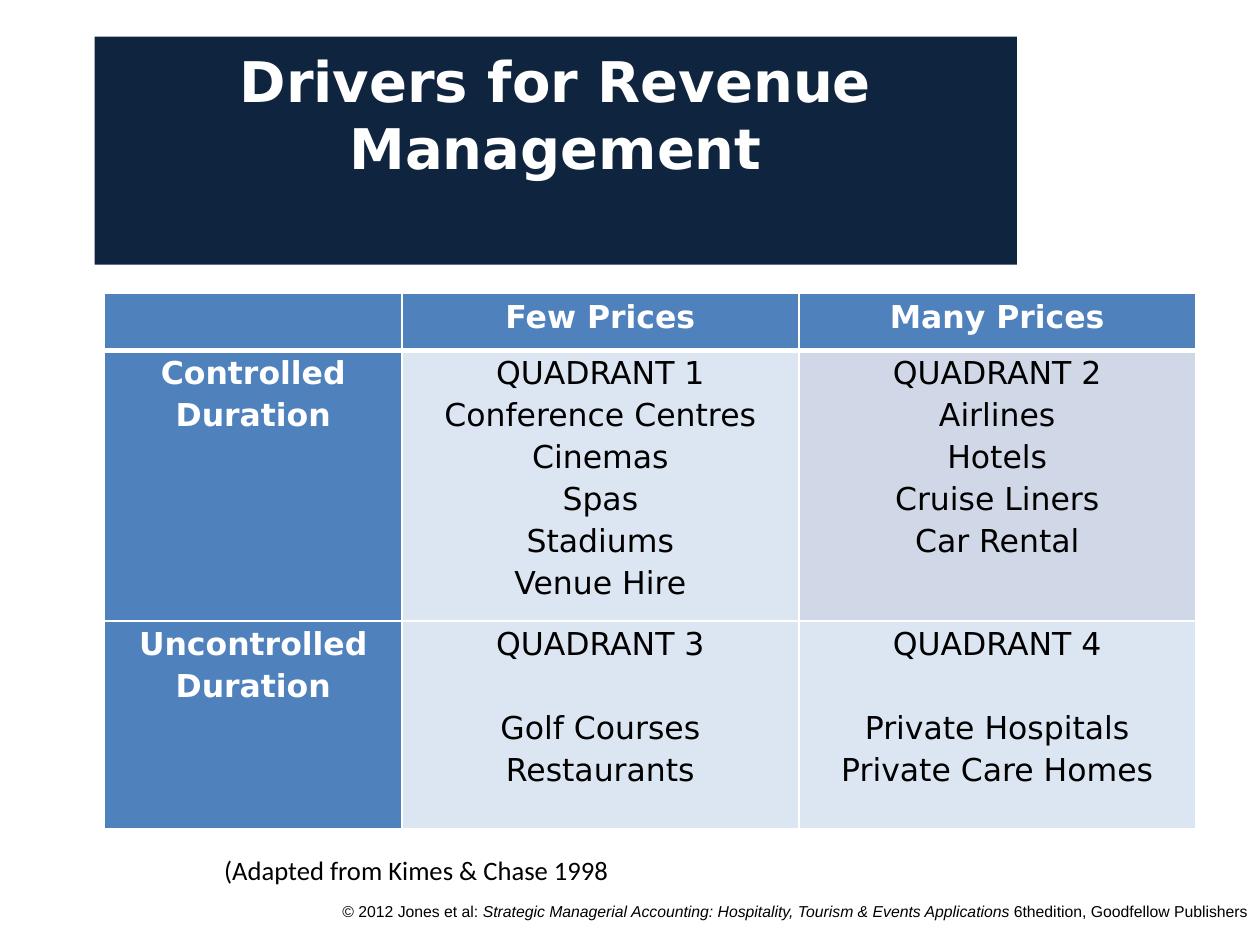
from dataclasses import dataclass

import pptx
import pptx.dml.color
import pptx.enum.shapes
import pptx.enum.text
import pptx.oxml.ns
import pptx.util
from lxml import etree

# The slide is a grid of 100 columns by 75 rows, each a tenth of an inch
UNIT = 0.1
COLUMNS, ROWS = 100, 75
COLORS = {"navy": "0F243E", "blue": "4F81BD", "pale": "DCE6F2",
          "lilac": "D0D8E8", "white": "FFFFFF", "black": "000000"}
ALIGN = pptx.enum.text.PP_ALIGN
ANCHOR = pptx.enum.text.MSO_ANCHOR


@dataclass
class Area:
    column: float
    row: float
    width: float
    height: float

    def lengths(self) -> list:
        return [grid(n) for n in (self.column, self.row, self.width, self.height)]


@dataclass
class TextStyle:
    font: str
    size: float
    color: str = "black"
    bold: bool = False
    align: ALIGN = ALIGN.CENTER


@dataclass
class Entry:
    lines: tuple
    fill: str
    heading: bool = False
    gap_after_first: float = 0


TITLE_STYLE = TextStyle("DejaVu Sans", 32, "white", True)
HEADING_STYLE = TextStyle("DejaVu Sans", 18, "white", True)
BODY_STYLE = TextStyle("DejaVu Sans", 18)
CAPTION_STYLE = TextStyle("Calibri", 15.2)
FOOTER_STYLE = TextStyle("Arial", 9, align=ALIGN.RIGHT)

COLUMN_WIDTHS = (23.6, 31.5, 31.5)
ROW_HEIGHTS = (4.5, 21.5, 16.5)
LINE_GAP = 24  # one blank line of body text, in points


def heading(*lines: str) -> Entry:
    return Entry(lines, "blue", heading=True)


ENTRIES = (
    (heading(), heading("Few Prices"), heading("Many Prices")),
    (heading("Controlled Duration"),
     Entry(("QUADRANT 1", "Conference Centres", "Cinemas", "Spas",
            "Stadiums", "Venue Hire"), "pale"),
     Entry(("QUADRANT 2", "Airlines", "Hotels", "Cruise Liners",
            "Car Rental"), "lilac")),
    (heading("Uncontrolled Duration"),
     Entry(("QUADRANT 3", "Golf Courses", "Restaurants"), "pale",
           gap_after_first=LINE_GAP),
     Entry(("QUADRANT 4", "Private Hospitals", "Private Care Homes"), "pale",
           gap_after_first=LINE_GAP)),
)


def grid(count: float) -> pptx.util.Length:
    return pptx.util.Inches(count * UNIT)


def rgb(name: str) -> pptx.dml.color.RGBColor:
    return pptx.dml.color.RGBColor.from_string(COLORS[name])


def style_paragraph(para, style: TextStyle) -> None:
    para.alignment = style.align
    para.font.name = style.font
    para.font.size = pptx.util.Pt(style.size)
    para.font.bold = style.bold
    para.font.color.rgb = rgb(style.color)


def set_frame(frame, anchor: ANCHOR, top: float, bottom: float) -> None:
    frame.word_wrap = True
    frame.vertical_anchor = anchor
    frame.margin_top, frame.margin_bottom = grid(top), grid(bottom)


def add_title(page, area: Area, text: str) -> None:
    box = page.shapes.add_shape(pptx.enum.shapes.MSO_SHAPE.RECTANGLE, *area.lengths())
    box.shadow.inherit = False
    box.fill.solid()
    box.fill.fore_color.rgb = rgb("navy")
    box.line.fill.background()
    set_frame(box.text_frame, ANCHOR.TOP, 0.8, 0.5)
    para = box.text_frame.paragraphs[0]
    para.text = text
    style_paragraph(para, TITLE_STYLE)


def add_text(page, area: Area, spans: tuple, style: TextStyle,
             anchor: ANCHOR, bottom: float = 0.5) -> None:
    """Write one paragraph; each span is a pair of text and italic flag."""
    box = page.shapes.add_textbox(*area.lengths())
    set_frame(box.text_frame, anchor, 0.5, bottom)
    para = box.text_frame.paragraphs[0]
    for text, italic in spans:
        span = para.add_run()
        span.text = text
        span.font.italic = italic
    style_paragraph(para, style)


def add_borders(cell, top: float, bottom: float) -> None:
    properties = cell._tc.get_or_add_tcPr()
    for side, points in (("L", 1), ("R", 1), ("T", top), ("B", bottom)):
        line = etree.SubElement(properties, pptx.oxml.ns.qn(f"a:ln{side}"),
                                w=str(pptx.util.Pt(points)))
        fill = etree.SubElement(line, pptx.oxml.ns.qn("a:solidFill"))
        etree.SubElement(fill, pptx.oxml.ns.qn("a:srgbClr"), val=COLORS["white"])


def fill_cell(cell, entry: Entry) -> None:
    cell.fill.solid()
    cell.fill.fore_color.rgb = rgb(entry.fill)
    cell.margin_left = cell.margin_right = grid(0.7)
    cell.margin_top = cell.margin_bottom = 0
    style = HEADING_STYLE if entry.heading else BODY_STYLE
    cell.text = "\n".join(entry.lines)
    for para in cell.text_frame.paragraphs:
        style_paragraph(para, style)
        para.line_spacing = 1.15
    if entry.gap_after_first:
        cell.text_frame.paragraphs[0].space_after = pptx.util.Pt(entry.gap_after_first)


def add_quadrants(page, column: float, row: float) -> None:
    area = Area(column, row, sum(COLUMN_WIDTHS), sum(ROW_HEIGHTS))
    table = page.shapes.add_table(len(ROW_HEIGHTS), len(COLUMN_WIDTHS),
                                  *area.lengths()).table
    table.first_row = table.horz_banding = False
    for table_column, width in zip(table.columns, COLUMN_WIDTHS):
        table_column.width = grid(width)
    for index, (height, entries) in enumerate(zip(ROW_HEIGHTS, ENTRIES)):
        table.rows[index].height = grid(height)
        for cell, entry in zip(table.rows[index].cells, entries):
            # A thick rule parts the header from the first body row
            add_borders(cell, top=3 if index == 1 else 1, bottom=3 if index == 0 else 1)
            fill_cell(cell, entry)


def main() -> None:
    deck = pptx.Presentation()
    deck.slide_width, deck.slide_height = grid(COLUMNS), grid(ROWS)
    page = deck.slides.add_slide(deck.slide_layouts[6])

    # Copyright line
    add_text(page, Area(22.3, 71.1, 77.7, 3.9), (
        ("© 2012 Jones et al: ", False),
        ("Strategic Managerial Accounting: Hospitality, Tourism & Events Applications ", True),
        ("6thedition, Goodfellow Publishers", False),
    ), FOOTER_STYLE, ANCHOR.TOP)

    # Title, table and its citation
    add_title(page, Area(7.5, 2.9, 73.2, 18.1), "Drivers for Revenue Management")
    add_quadrants(page, 8.3, 23.3)
    add_text(page, Area(12.2, 64.3, 41.7, 6.2),
             (("(Adapted from Kimes & Chase 1998", False),),
             CAPTION_STYLE, ANCHOR.BOTTOM, bottom=0.2)

    deck.save("out.pptx")


if __name__ == "__main__":
    main()
